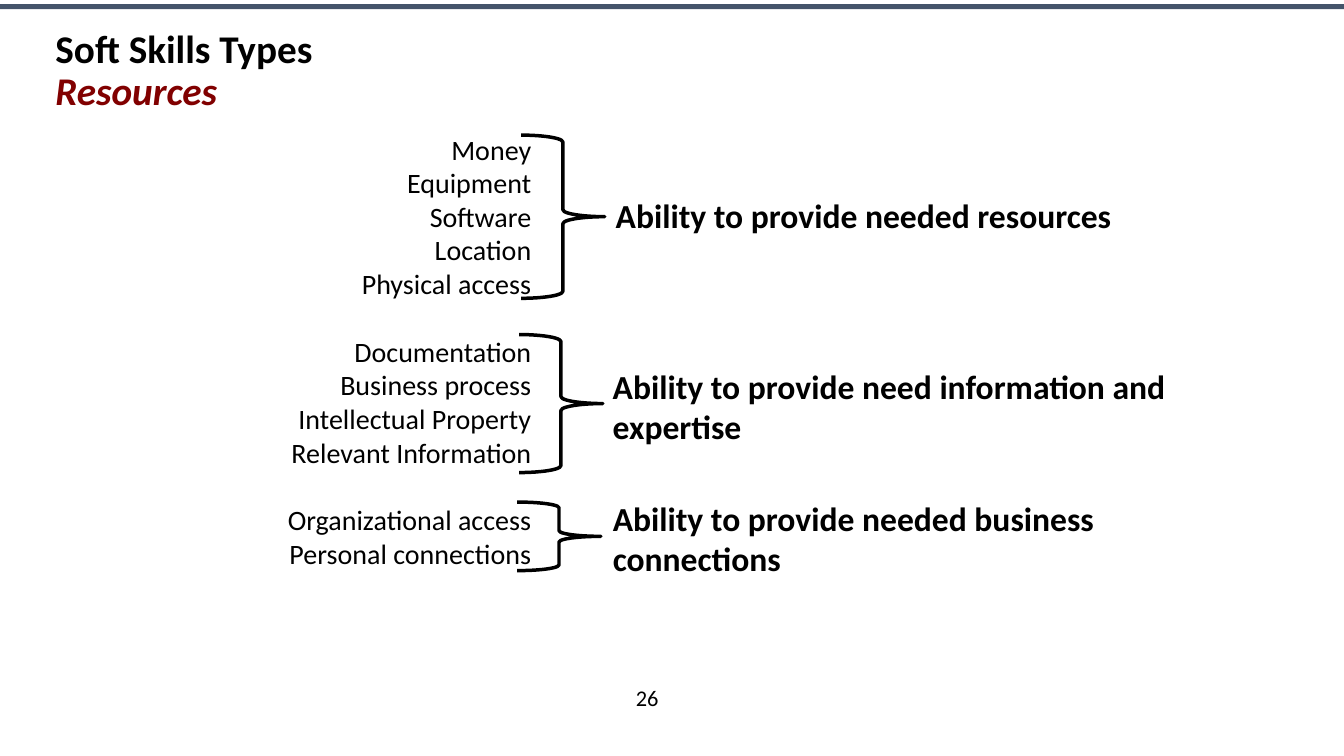
import pptx
import pptx.dml.color
import pptx.enum.shapes
import pptx.enum.text
import pptx.util
import lxml.etree

Pt = pptx.util.Pt
Align = pptx.enum.text.PP_ALIGN
Anchor = pptx.enum.text.MSO_ANCHOR
Shape = pptx.enum.shapes.MSO_SHAPE


def colour(value):
    return pptx.dml.color.RGBColor.from_string(value)


class SlideBuilder:
    font_name = "Calibri"
    ink = "000000"
    accent = "810000"
    bar_fill = "44546A"
    line_height = 24.4

    def __init__(self, page):
        self.page = page

    def place(self, shape, left, top, width, height):
        shape.left, shape.top = Pt(left), Pt(top)
        shape.width, shape.height = Pt(width), Pt(height)

    def style(self, font, size, bold=False):
        font.name = self.font_name
        font.size = Pt(size)
        font.bold = bold
        font.color.rgb = colour(self.ink)

    def frame(self, shape, anchor=Anchor.TOP):
        frame = shape.text_frame
        frame.word_wrap = True
        frame.auto_size = pptx.enum.text.MSO_AUTO_SIZE.NONE
        frame.vertical_anchor = anchor
        return frame

    def title(self, heading, subheading, *bounds):
        title = self.page.shapes.title
        self.place(title, *bounds)
        frame = self.frame(title)
        frame.text = f"{heading}\v{subheading}"
        para = frame.paragraphs[0]
        para.alignment = Align.LEFT
        para.line_spacing = 0.9
        for span in para.runs:
            self.style(span.font, 28, bold=True)
        para.runs[-1].font.italic = True
        para.runs[-1].font.color.rgb = colour(self.accent)

    def body(self, groups, *bounds):
        body = self.page.placeholders[1]
        self.place(body, *bounds)
        frame = self.frame(body)
        frame.text = "\n".join(item for group in groups for item in group)
        group_starts = {group[0] for group in groups[1:]}
        for para in frame.paragraphs:
            properties = para._p.get_or_add_pPr()
            properties.set("marL", "0")
            properties.set("indent", "0")
            lxml.etree.SubElement(properties, pptx.oxml.ns.qn("a:buNone"))
            para.alignment = Align.RIGHT
            para.line_spacing = 1.0
            para.space_before = Pt(self.line_height if para.text in group_starts else 0)
            self.style(para.runs[0].font, 20)

    def bar(self, *bounds):
        bar = self.page.shapes.add_shape(Shape.RECTANGLE, *map(Pt, bounds))
        bar.shadow.inherit = False
        bar.fill.solid()
        bar.fill.fore_color.rgb = colour(self.bar_fill)
        bar.line.fill.background()

    def brace(self, *bounds):
        brace = self.page.shapes.add_shape(Shape.RIGHT_BRACE, *map(Pt, bounds))
        brace.shadow.inherit = False
        brace.fill.background()
        brace.line.color.rgb = colour(self.ink)
        brace.line.width = Pt(2.5)

    def text(self, words, bounds, size, bold=False, align=Align.LEFT, anchor=Anchor.TOP):
        box = self.page.shapes.add_textbox(*map(Pt, bounds))
        frame = self.frame(box, anchor)
        frame.text = words
        para = frame.paragraphs[0]
        para.alignment = align
        self.style(para.runs[0].font, size, bold)


def main():
    deck = pptx.Presentation()
    deck.slide_width, deck.slide_height = Pt(960), Pt(540)
    slide = SlideBuilder(deck.slides.add_slide(deck.slide_layouts[1]))

    skill_groups = [
        ["Money", "Equipment", "Software", "Location", "Physical access"],
        ["Documentation", "Business process", "Intellectual Property", "Relevant Information"],
        ["Organizational access", "Personal connections"],
    ]
    abilities = [
        ("Ability to provide needed resources",
         (372.2, 96.5, 59.8, 116.6), (432.7, 135.4, 406, 36)),
        ("Ability to provide need information and expertise",
         (370.8, 239, 59.8, 98.6), (430.6, 257.8, 414.7, 65.5)),
        ("Ability to provide needed business connections",
         (369.4, 358.6, 59.8, 49), (430.6, 352.1, 442, 65.5)),
    ]

    slide.bar(0, 2.9, 960, 3.6)
    slide.text("26", (435.6, 483.8, 53.3, 28.8), 16, align=Align.CENTER, anchor=Anchor.MIDDLE)
    slide.title("Soft Skills Types", "Resources", 32.4, 17.3, 860.4, 67.7)
    slide.body(skill_groups, 146.9, 90.7, 239.8, 369.4)
    for ability, brace_bounds, label_bounds in abilities:
        slide.brace(*brace_bounds)
        slide.text(ability, label_bounds, 24, bold=True)

    deck.save("out.pptx")


if __name__ == "__main__":
    main()
